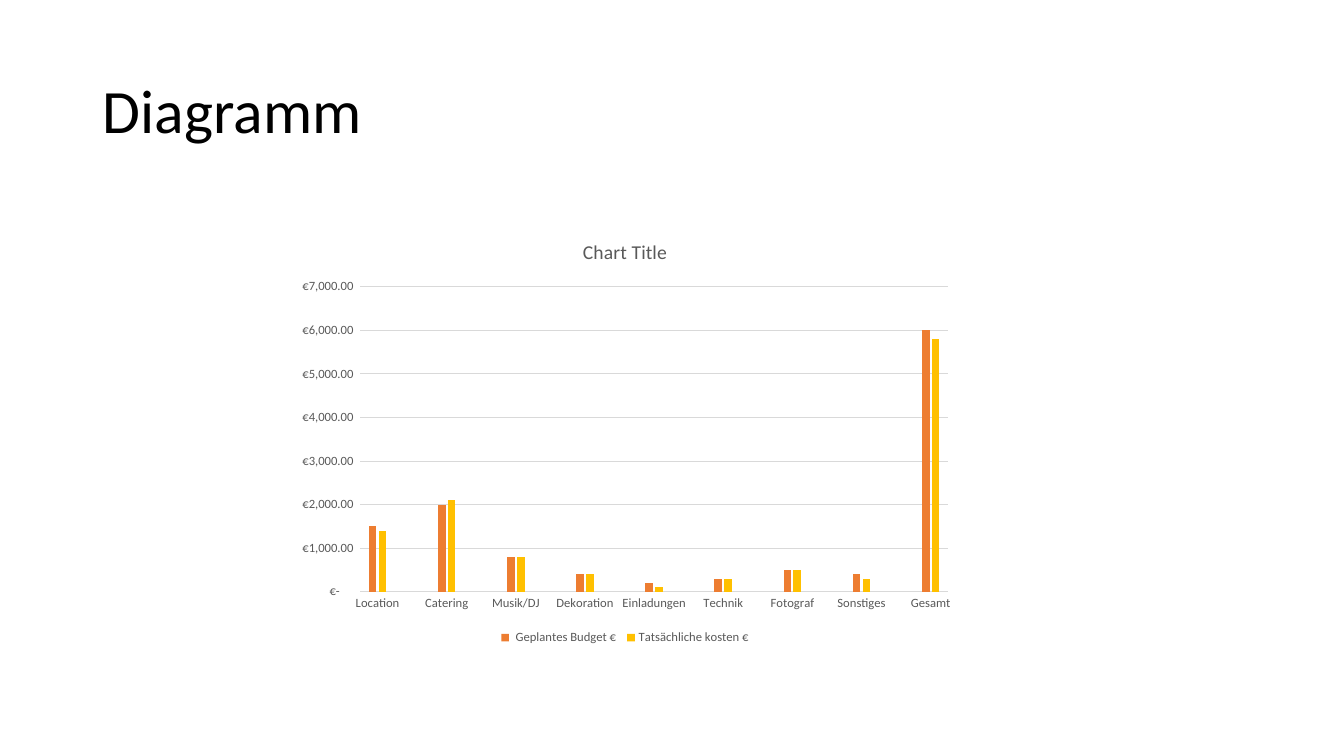
from pptx import Presentation
from pptx import util as u
from pptx.chart import data
from pptx.dml.color import RGBColor
from pptx.enum import chart as ch, text

EMU_PER_PX = 914400 / 100.8
FONT = "Calibri"
COLORS = {
    "title": "000000",
    "label": "595959",
    "grid": "D9D9D9",
    "planned": "ED7D31",
    "actual": "FFC000",
}
EURO_FORMAT = r'_("€"* #,##0.00_);_("€"* \(#,##0.00\);_("€"* "-"??_);_(@_)'

# Cost item, planned budget, actual cost
COSTS = [
    ("Location", 1500, 1400),
    ("Catering", 2000, 2100),
    ("Musik/DJ", 800, 800),
    ("Dekoration", 400, 400),
    ("Einladungen", 200, 100),
    ("Technik", 300, 300),
    ("Fotograf", 500, 500),
    ("Sonstiges", 400, 300),
    ("Gesamt", 6000, 5800),
]


def px(length):
    return u.Emu(round(length * EMU_PER_PX))


def color(name):
    return RGBColor.from_string(COLORS[name])


def style_font(font, size, color_name):
    font.name = FONT
    font.size = u.Pt(size)
    font.bold = False
    font.color.rgb = color(color_name)


def style_line(line):
    line.color.rgb = color("grid")
    line.width = u.Pt(0.75)


def add_heading(slide, wording, left, top, width, height):
    frame = slide.shapes.add_textbox(px(left), px(top), px(width), px(height)).text_frame
    frame.word_wrap = True
    frame.vertical_anchor = text.MSO_ANCHOR.MIDDLE
    line = frame.paragraphs[0]
    line.line_spacing = 0.9
    run = line.add_run()
    run.text = wording
    style_font(run.font, 44, "title")


def budget_data():
    # An empty row separates each cost item from the next
    rows = []
    for cost in COSTS:
        rows += [cost, ("", None, None)]
    items, planned, actual = zip(*rows[:-1])
    budget = data.CategoryChartData()
    budget.categories = items
    budget.add_series(" Geplantes Budget € ", planned)
    budget.add_series("Tatsächliche kosten €", actual)
    return budget


def style_axis(axis):
    axis.major_tick_mark = axis.minor_tick_mark = ch.XL_TICK_MARK.NONE
    style_font(axis.tick_labels.font, 9, "label")


def add_budget_chart(slide, left, top, width, height):
    chart = slide.shapes.add_chart(
        ch.XL_CHART_TYPE.COLUMN_CLUSTERED,
        px(left), px(top), px(width), px(height), budget_data(),
    ).chart
    style_font(chart.font, 10, "title")

    # Chart title
    chart.has_title = True
    caption = chart.chart_title.text_frame.paragraphs[0].add_run()
    caption.text = "Chart Title"
    style_font(caption.font, 14, "label")
    chart.chart_title.include_in_layout = False

    # Legend
    chart.has_legend = True
    chart.legend.position = ch.XL_LEGEND_POSITION.BOTTOM
    chart.legend.include_in_layout = False
    style_font(chart.legend.font, 9, "label")

    # Axes
    items, euros = chart.category_axis, chart.value_axis
    style_axis(items)
    style_line(items.format.line)
    style_axis(euros)
    euros.format.line.fill.background()
    euros.has_major_gridlines = True
    style_line(euros.major_gridlines.format.line)
    euros.minimum_scale, euros.maximum_scale, euros.major_unit = 0, 7000, 1000
    euros.tick_labels.number_format = EURO_FORMAT
    euros.tick_labels.number_format_is_linked = False

    # Columns
    columns = chart.plots[0]
    columns.gap_width = 219
    columns.overlap = -27
    columns.vary_by_categories = False
    for series, name in zip(columns.series, ("planned", "actual")):
        series.format.fill.solid()
        series.format.fill.fore_color.rgb = color(name)
        series.invert_if_negative = False


def main():
    deck = Presentation()
    deck.slide_width, deck.slide_height = px(1344), px(756)
    slide = deck.slides.add_slide(deck.slide_layouts[6])
    add_heading(slide, "Diagramm", 93, 41, 1159, 146)
    add_budget_chart(slide, 286, 221, 678, 428)
    deck.save("out.pptx")


if __name__ == "__main__":
    main()
